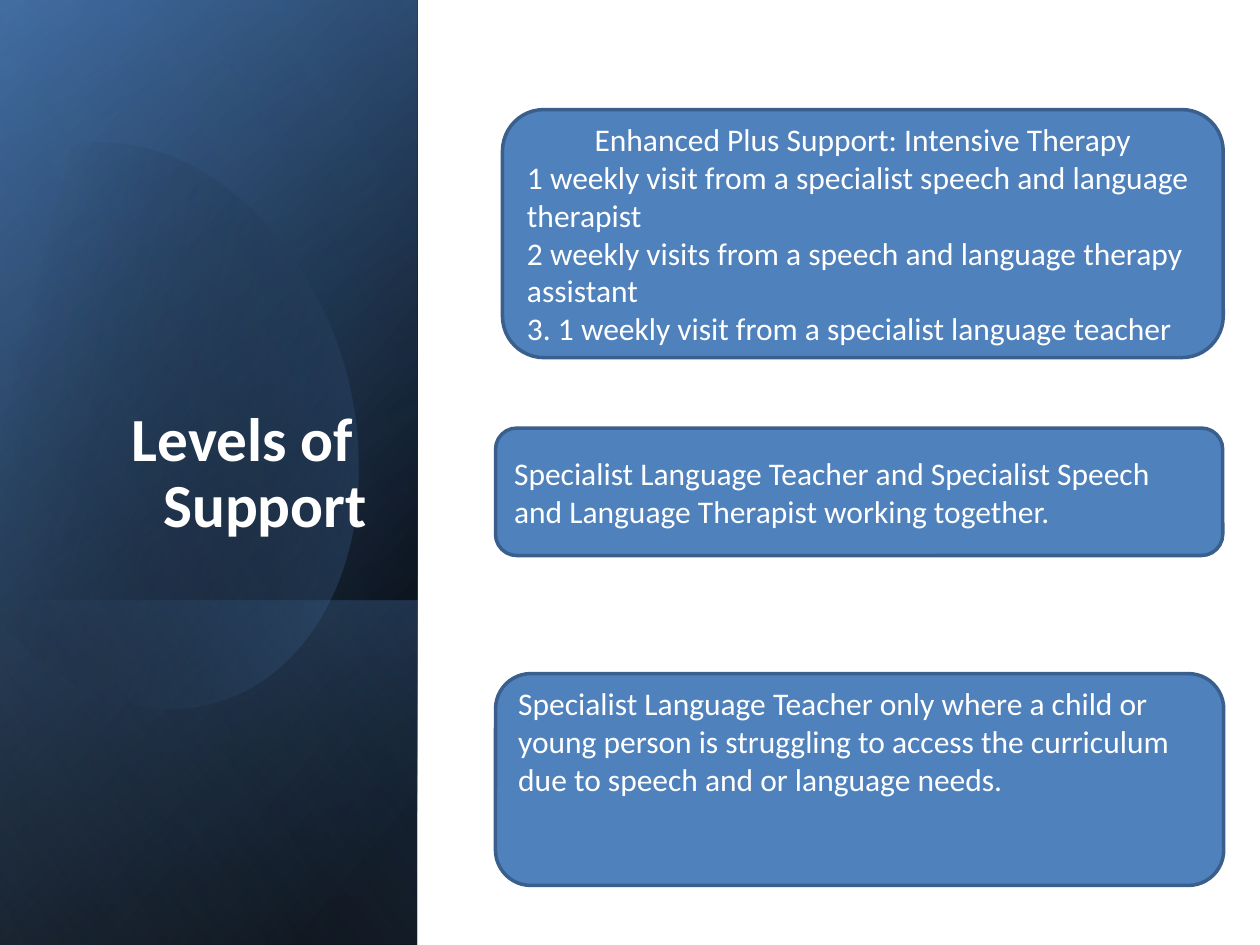
"""Build the Levels of Support slide: a dark gradient title panel and three support cards."""
import math

import lxml.etree
import pptx
import pptx.dml.color
import pptx.enum.shapes
import pptx.enum.text
import pptx.oxml.ns
import pptx.util

Cm, Pt = pptx.util.Cm, pptx.util.Pt
RGB = pptx.dml.color.RGBColor.from_string
SHAPE = pptx.enum.shapes.MSO_SHAPE
ALIGN = pptx.enum.text.PP_ALIGN
ANCHOR = pptx.enum.text.MSO_ANCHOR
qn = pptx.oxml.ns.qn

THEME = {
    "font": "Calibri", "title_size": 35, "body_size": 18, "line_width": 2,
    "text": "FFFFFF", "card": "4F81BD", "border": "3A5F8C", "page": "FFFFFF",
    "dark": "000000", "navy": "376092", "blue": "4F81BD", "pale": "95B3D7",
}

SLIDE = (25.4, 19.05)
TITLE = "Levels of  Support"
TITLE_BOX = (0.97, 1.63, 6.68, 9.4)

CARDS = [
    {"box": (10.13, 2.21, 14.53, 5), "anchor": ANCHOR.MIDDLE,
     "heading": "Enhanced Plus Support: Intensive Therapy",
     "lines": ["1 weekly visit from a specialist speech and language therapist",
               "2 weekly visits from a speech and language therapy assistant",
               "3. 1 weekly visit from a specialist language teacher"]},
    {"box": (9.99, 8.63, 14.66, 2.57), "anchor": ANCHOR.MIDDLE,
     "lines": ["Specialist Language Teacher and Specialist Speech and Language "
               "Therapist working together."]},
    {"box": (9.99, 13.58, 14.68, 4.27), "anchor": ANCHOR.TOP, "top": 0,
     "lines": ["Specialist Language Teacher only where a child or young person is "
               "struggling to access the curriculum due to speech and or language needs."]},
]

PANEL = (0, 0, 8.41, 19.05)
LOWER_PANEL = (0, 12.1, 8.41, 6.95)
BACK_LAYERS = [
    (PANEL, 50, [(8, "dark", 100), (100, "navy", 100)]),
    (PANEL, 30, [(0, "dark", 0), (99, "blue", 46)]),
    (LOWER_PANEL, 130, [(2, "blue", 29), (100, "dark", 30)]),
]
FRONT_LAYER = (PANEL, 120, [(0, "dark", 0), (99, "pale", 11)])

OVAL_BOX = (-1.04, 2.69, 8.13, 11.61)
OVAL_TILT = -16.1
OVAL_OUTLINE = [
    ("moveTo", [(2.44, 2.9)]),
    ("cubicBezTo", [(4.34, 3.1), (6.2, 4.88), (6.93, 7.37)]),
    ("cubicBezTo", [(7.8, 10.46), (6.65, 13.49), (4.34, 14.15)]),
    ("cubicBezTo", [(2.9, 14.58), (1.35, 13.97), (0.18, 12.7)]),
    ("lnTo", [(-0.08, 12.4)]),
    ("lnTo", [(-0.64, 4.22)]),
    ("lnTo", [(-0.38, 3.91)]),
    ("cubicBezTo", [(0.05, 3.48), (0.56, 3.18), (1.14, 3)]),
    ("cubicBezTo", [(1.6, 2.87), (2.01, 2.84), (2.44, 2.9)]),
    ("close", []),
]
OVAL_FILL = (30, [(29, "dark", 0), (100, "blue", 43)])


def set_solid(s, color):
    s.shadow.inherit = False
    s.fill.solid()
    s.fill.fore_color.rgb = RGB(THEME[color])


def set_gradient(s, angle, stops):
    s.shadow.inherit = False
    s.line.fill.background()
    s.fill.gradient()
    grad = s._element.spPr.find(qn("a:gradFill"))
    for child in list(grad):
        grad.remove(child)
    gs_list = lxml.etree.SubElement(grad, qn("a:gsLst"))
    for pos, color, alpha in stops:
        gs = lxml.etree.SubElement(gs_list, qn("a:gs"), pos=str(pos * 1000))
        rgb = lxml.etree.SubElement(gs, qn("a:srgbClr"), val=THEME[color])
        lxml.etree.SubElement(rgb, qn("a:alpha"), val=str(alpha * 1000))
    lxml.etree.SubElement(grad, qn("a:lin"), ang=str(angle * 60000), scaled="0")


def add_layer(shapes, box, angle, stops):
    x, y, w, h = box
    turned = (x + (w - h) / 2, y + (h - w) / 2, h, w)
    s = shapes.add_shape(SHAPE.RECTANGLE, *map(Cm, turned))
    s.rotation = 90
    s._element.spPr.find(qn("a:xfrm")).set("flipH", "1")
    set_gradient(s, angle, stops)


def untilt(point):
    x, y, w, h = OVAL_BOX
    dx, dy = point[0] - x - w / 2, point[1] - y - h / 2
    cos, sin = math.cos(math.radians(-OVAL_TILT)), math.sin(math.radians(-OVAL_TILT))
    return Cm(w / 2 + dx * cos - dy * sin), Cm(h / 2 + dx * sin + dy * cos)


def add_oval(shapes):
    ends = [untilt(points[-1]) for _, points in OVAL_OUTLINE if points]
    builder = shapes.build_freeform(*ends[0])
    builder.add_line_segments(ends[1:])
    s = builder.convert_to_shape()
    s.left, s.top, s.width, s.height = map(Cm, OVAL_BOX)
    s.rotation = OVAL_TILT
    outline = next(s._element.iter(qn("a:path")))
    for child in list(outline):
        outline.remove(child)
    outline.set("w", str(s.width))
    outline.set("h", str(s.height))
    for command, points in OVAL_OUTLINE:
        step = lxml.etree.SubElement(outline, qn("a:" + command))
        for px, py in map(untilt, points):
            lxml.etree.SubElement(step, qn("a:pt"), x=str(int(px)), y=str(int(py)))
    set_gradient(s, *OVAL_FILL)


def style(p, size, align, bold=False):
    p.alignment = align
    p.font.name = THEME["font"]
    p.font.size = Pt(size)
    p.font.bold = bold
    p.font.color.rgb = RGB(THEME["text"])


def add_title(shapes):
    tf = shapes.add_textbox(*map(Cm, TITLE_BOX)).text_frame
    tf.word_wrap = True
    tf.vertical_anchor = ANCHOR.BOTTOM
    p = tf.paragraphs[0]
    p.text = TITLE
    p.line_spacing = 0.9
    style(p, THEME["title_size"], ALIGN.RIGHT, bold=True)


def add_card(shapes, card):
    s = shapes.add_shape(SHAPE.ROUNDED_RECTANGLE, *map(Cm, card["box"]))
    set_solid(s, "card")
    s.line.color.rgb = RGB(THEME["border"])
    s.line.width = Pt(THEME["line_width"])
    tf = s.text_frame
    tf.word_wrap = True
    tf.vertical_anchor = card["anchor"]
    tf.margin_top = Cm(card.get("top", 0.13))
    heading = [(card["heading"], ALIGN.CENTER)] if "heading" in card else []
    entries = heading + [(line, ALIGN.LEFT) for line in card["lines"]]
    for i, (text, align) in enumerate(entries):
        p = tf.add_paragraph() if i else tf.paragraphs[0]
        p.text = text
        style(p, THEME["body_size"], align)


def main():
    prs = pptx.Presentation()
    prs.slide_width, prs.slide_height = map(Cm, SLIDE)
    shapes = prs.slides.add_slide(prs.slide_layouts[6]).shapes
    page = shapes.add_shape(SHAPE.RECTANGLE, 0, 0, *map(Cm, SLIDE))
    set_solid(page, "page")
    page.line.fill.background()
    for layer in BACK_LAYERS:
        add_layer(shapes, *layer)
    add_oval(shapes)
    add_layer(shapes, *FRONT_LAYER)
    add_title(shapes)
    for card in CARDS:
        add_card(shapes, card)
    prs.save("out.pptx")


if __name__ == "__main__":
    main()
